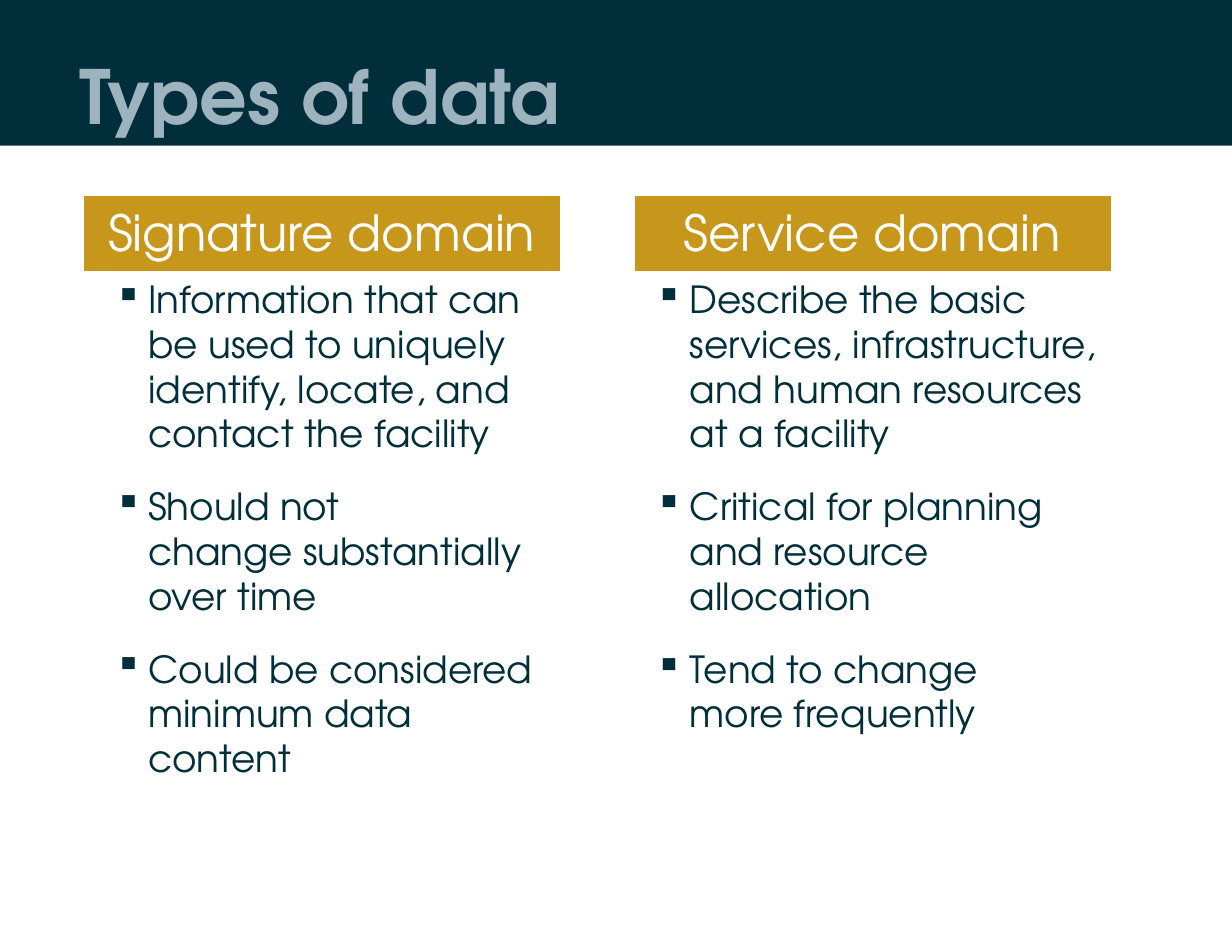
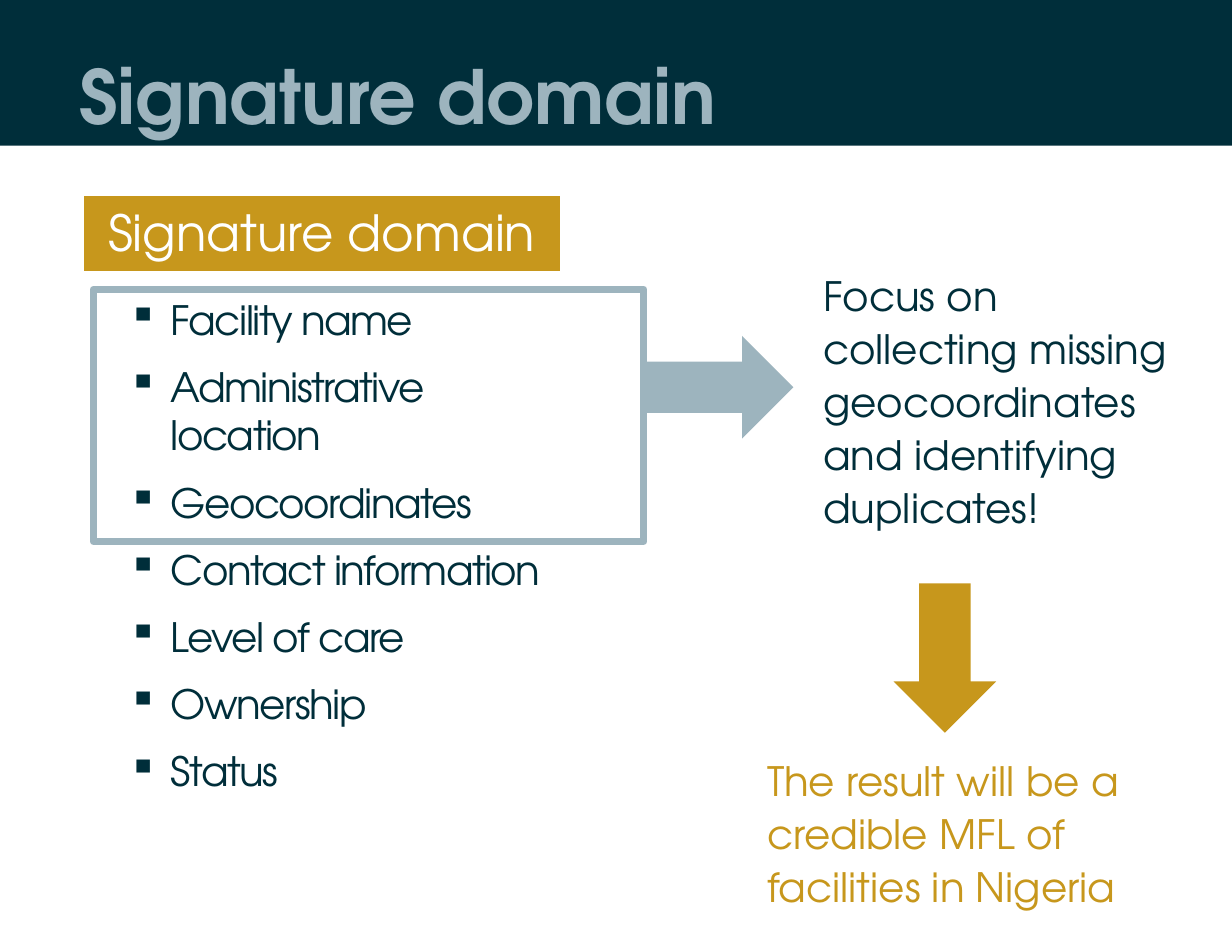
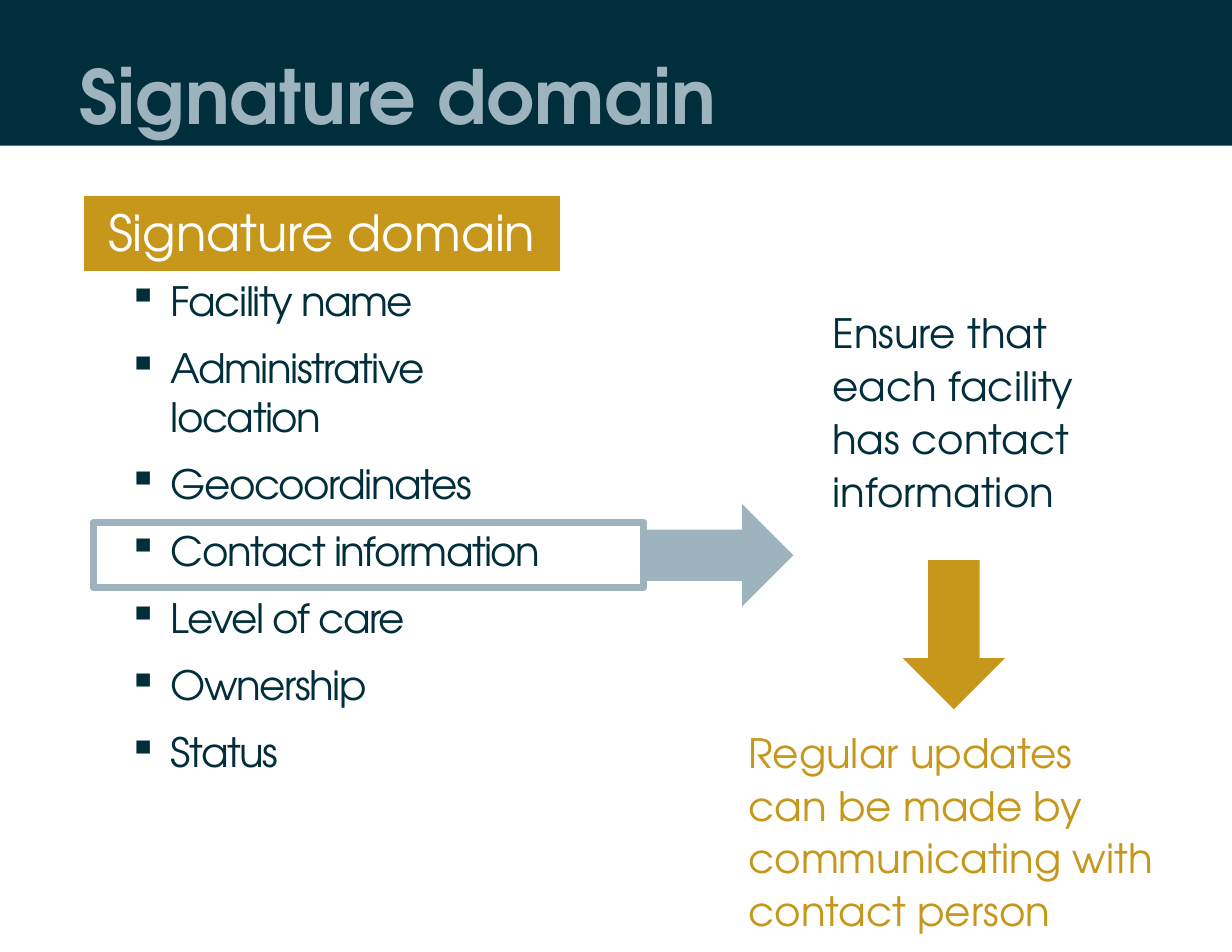
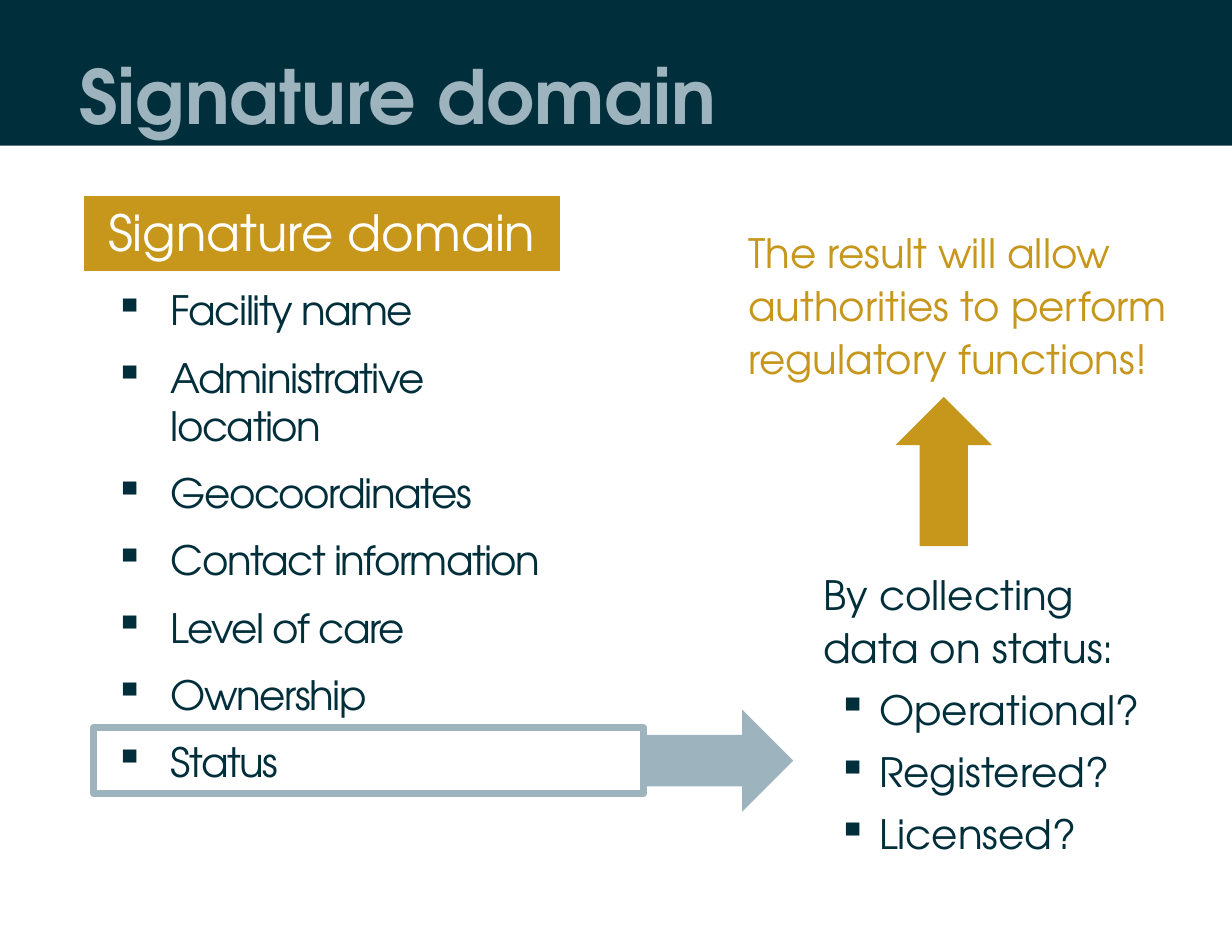
from dataclasses import dataclass, replace

from lxml import etree
from pptx import Presentation
from pptx.dml.color import RGBColor
from pptx.enum.shapes import MSO_SHAPE
from pptx.enum.text import MSO_ANCHOR, PP_ALIGN
from pptx.oxml.ns import qn
from pptx.shapes.autoshape import Shape
from pptx.slide import Slide
from pptx.util import Inches, Pt

PROCESS = MSO_SHAPE.FLOWCHART_PROCESS
RIGHT_ARROW = MSO_SHAPE.RIGHT_ARROW
TOP = MSO_ANCHOR.TOP
LEFT, CENTER = PP_ALIGN.LEFT, PP_ALIGN.CENTER

NAVY = RGBColor(0x00, 0x2E, 0x3A)
MIST = RGBColor(0x9D, 0xB4, 0xBE)
GOLD = RGBColor(0xC7, 0x97, 0x1C)
WHITE = RGBColor(0xFF, 0xFF, 0xFF)
FONT = "TeX Gyre Adventor"

# The grid has twelve cells to the inch
COLUMNS, ROWS = 132, 102
CELL = Inches(1) // 12
BULLET = "▪"


@dataclass(frozen=True)
class Area:
    """A rectangle in grid columns and rows."""
    column: float
    row: float
    columns: float
    rows: float

    def lengths(self) -> list[int]:
        return [round(value * CELL)
                for value in (self.column, self.row, self.columns, self.rows)]


@dataclass(frozen=True)
class TextStyle:
    size: float
    color: RGBColor = NAVY
    bold: bool = False
    align: PP_ALIGN = LEFT
    line_points: float | None = None
    after: float = 0
    tracking: float = 0
    bullet_indent: float = 0  # inches from the box to the text
    bullet_hang: float = 0    # inches from the bullet to the text


@dataclass(frozen=True)
class Step:
    """One signature-domain slide: highlighted items and what follows."""
    list_row: float
    list_hang: float
    frame_row: float
    frame_rows: float
    arrow_row: float
    action: tuple[str, ...]
    action_area: Area
    result: str
    result_area: Area
    result_arrow: Area
    rotation: float


TITLE = TextStyle(48, MIST, bold=True)
HEADER = TextStyle(32, WHITE, align=CENTER)
DOMAIN_LIST = TextStyle(24, after=18, bullet_indent=0.31, bullet_hang=0.3)
ITEM_LIST = TextStyle(26, after=12, tracking=-1, bullet_indent=0.51)
ACTION = TextStyle(26, line_points=34, after=6)
ACTION_LIST = replace(ACTION, bullet_indent=0.5, bullet_hang=0.37)
RESULT = TextStyle(26, GOLD, line_points=34)

BAND_AREA = Area(0, 0, COLUMNS, 15.6)
TITLE_AREA = Area(7.3, 4.8, 114.5, 15)
SIGNATURE_AREA = Area(9, 21, 51, 8)
SERVICE_AREA = replace(SIGNATURE_AREA, column=68)
LIST_AREA = Area(11, 29, 49, 60)
SERVICE_LIST_AREA = Area(69, 29, 51, 63)

# Wording
SIGNATURE_POINTS = (
    "Information that can be used to uniquely identify, locate, "
    "and contact the facility",
    "Should not\nchange substantially\nover time",
    "Could be considered minimum data content",
)
SERVICE_POINTS = (
    "Describe the basic services, infrastructure, "
    "and human resources at a facility",
    "Critical for planning and resource allocation",
    "Tend to change\nmore frequently",
)
SIGNATURE_ITEMS = (
    "Facility name", "Administrative location", "Geocoordinates",
    "Contact information", "Level of care", "Ownership", "Status",
)
STEPS = (
    Step(31, 0.38, 31, 27, 36,
         ("Focus on collecting missing geocoordinates "
          "and identifying duplicates!",),
         Area(87, 28, 40, 30),
         "The result will be a credible MFL of facilities in Nigeria",
         Area(81, 80, 51, 20), Area(93.24, 65, 16, 11), 90),
    Step(29, 0.38, 56, 7, 54,
         ("Ensure that each facility has contact information",),
         Area(88, 32, 35, 26),
         "Regular updates\ncan be made by communicating with contact person",
         Area(79, 76.92, 51, 20), Area(94.2, 62.5, 16, 11), 90),
    Step(30, 0.5, 78, 7, 76,
         ("By collecting data on status:",
          "Operational?", "Registered?", "Licensed?"),
         Area(87, 60, 40, 27),
         "The result will allow authorities to perform regulatory functions!",
         Area(79, 23.4, 48, 20), Area(93.12, 45.36, 16, 10.32), 270),
)


def format_paragraph(paragraph, style: TextStyle) -> None:
    paragraph.alignment = style.align
    paragraph.space_after = Pt(style.after)
    if style.line_points:
        paragraph.line_spacing = Pt(style.line_points)
    if style.bullet_indent:
        properties = paragraph._p.get_or_add_pPr()
        properties.set("marL", str(Inches(style.bullet_indent)))
        properties.set("indent", str(-Inches(style.bullet_hang)))
        etree.SubElement(properties, qn("a:buChar")).set("char", BULLET)
    for run in paragraph.runs:
        run.font.name = FONT
        run.font.size = Pt(style.size)
        run.font.bold = style.bold
        run.font.color.rgb = style.color
        if style.tracking:
            run._r.get_or_add_rPr().set("spc", str(round(style.tracking * 100)))


def write(shape: Shape, texts: tuple[str, ...], style: TextStyle,
          first_style: TextStyle | None = None) -> None:
    """Write one paragraph per text; the first may have its own style."""
    frame = shape.text_frame
    frame.word_wrap = True
    frame.vertical_anchor = TOP
    frame.text = ""
    for index, text in enumerate(texts):
        paragraph = frame.add_paragraph() if index else frame.paragraphs[0]
        paragraph.text = text
        format_paragraph(paragraph, style if index else first_style or style)


def add_text(slide: Slide, area: Area, texts: tuple[str, ...],
             style: TextStyle) -> None:
    write(slide.shapes.add_textbox(*area.lengths()), texts, style)


def add_block(slide: Slide, kind: MSO_SHAPE, area: Area,
              fill: RGBColor | None = None, line: RGBColor | None = None,
              rotation: float = 0) -> Shape:
    shape = slide.shapes.add_shape(kind, *area.lengths())
    shape.shadow.inherit = False
    shape.rotation = rotation
    if fill is None:
        shape.fill.background()
    else:
        shape.fill.solid()
        shape.fill.fore_color.rgb = fill
    if line is None:
        shape.line.fill.background()
    else:
        shape.line.color.rgb = line
        shape.line.width = Pt(4.5)
    return shape


def add_header(slide: Slide, area: Area, text: str) -> None:
    write(add_block(slide, PROCESS, area, GOLD), (text,), HEADER)


def add_titled_slide(presentation, title: str) -> Slide:
    """Start a slide with the title band and the signature header."""
    slide = presentation.slides.add_slide(presentation.slide_layouts[6])
    add_block(slide, MSO_SHAPE.RECTANGLE, BAND_AREA, NAVY)
    add_text(slide, TITLE_AREA, (title,), TITLE)
    add_header(slide, SIGNATURE_AREA, "Signature domain")
    return slide


def add_types_slide(presentation) -> None:
    slide = add_titled_slide(presentation, "Types of data")
    add_text(slide, LIST_AREA, SIGNATURE_POINTS, DOMAIN_LIST)
    add_header(slide, SERVICE_AREA, "Service domain")
    add_text(slide, SERVICE_LIST_AREA, SERVICE_POINTS,
             replace(DOMAIN_LIST, bullet_hang=0.31))


def add_step_slide(presentation, step: Step) -> None:
    slide = add_titled_slide(presentation, "Signature domain")
    add_text(slide, replace(LIST_AREA, row=step.list_row), SIGNATURE_ITEMS,
             replace(ITEM_LIST, bullet_hang=step.list_hang))
    # Highlighted items and the arrow leading to the action
    add_block(slide, PROCESS, Area(10, step.frame_row, 59, step.frame_rows),
              line=MIST)
    add_block(slide, RIGHT_ARROW, Area(69, step.arrow_row, 16, 11), MIST)
    action = add_block(slide, PROCESS, step.action_area)
    write(action, step.action, ACTION_LIST, first_style=ACTION)
    # Arrow leading to the result
    add_block(slide, RIGHT_ARROW, step.result_arrow, GOLD,
              rotation=step.rotation)
    add_text(slide, step.result_area, (step.result,), RESULT)


def main() -> None:
    presentation = Presentation()
    presentation.slide_width = COLUMNS * CELL
    presentation.slide_height = ROWS * CELL
    add_types_slide(presentation)
    for step in STEPS:
        add_step_slide(presentation, step)
    presentation.save("out.pptx")


if __name__ == "__main__":
    main()
